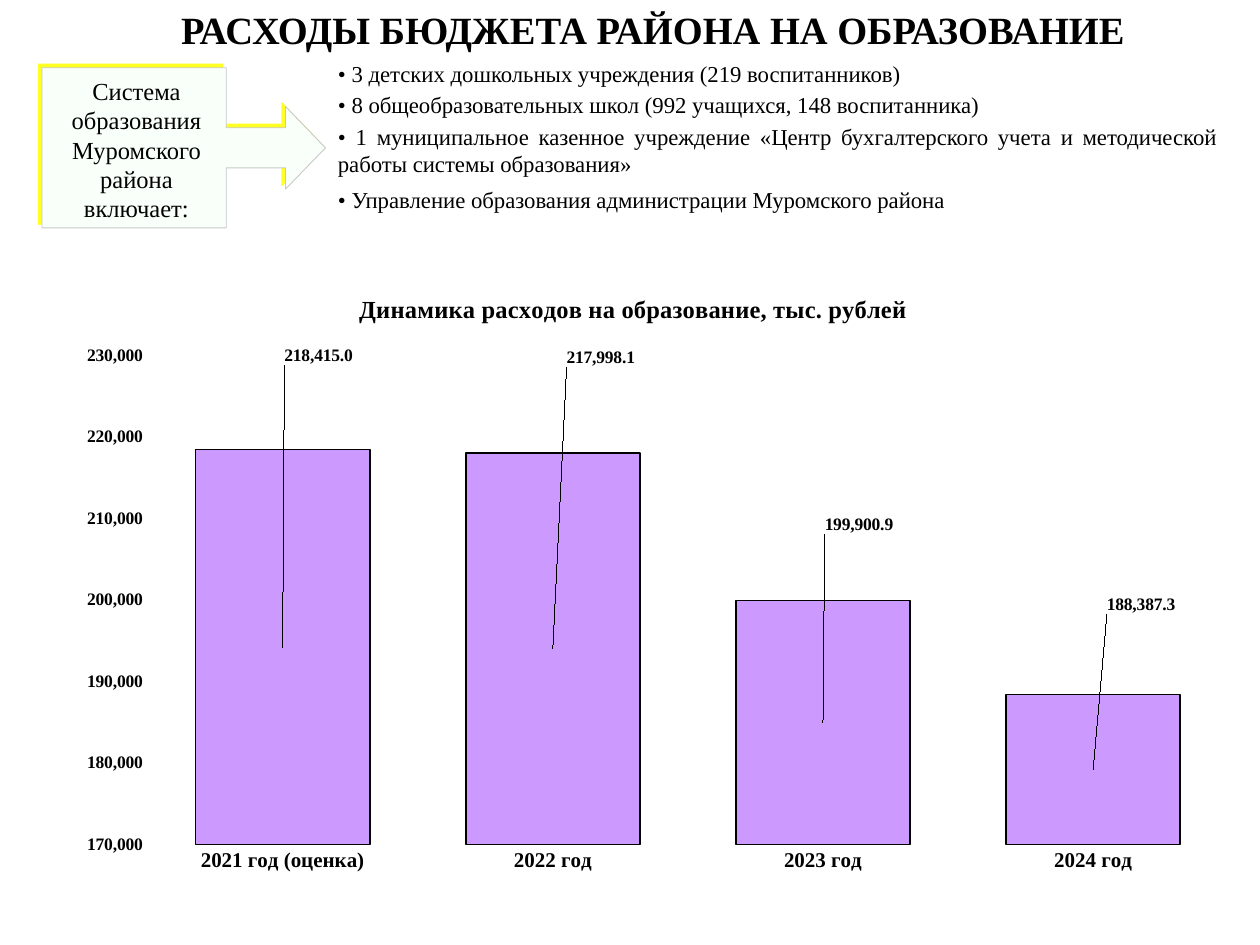
import pptx
import pptx.chart.data
import pptx.dml.color
import pptx.enum.chart
import pptx.enum.shapes
import pptx.enum.text
import pptx.oxml
import pptx.oxml.ns
import pptx.util

Pt = pptx.util.Pt
ALIGN = pptx.enum.text.PP_ALIGN
FONT = "Times New Roman"
CHART_NS = pptx.oxml.ns.nsdecls("c")

BULLETS = [  # text, top, height
    ("• 3 детских дошкольных учреждения (219 воспитанников)", 30.5, 23),
    ("• 8 общеобразовательных школ (992 учащихся, 148 воспитанника)", 48.5, 23),
    ("• 1 муниципальное казенное учреждение «Центр бухгалтерского учета "
     "и методической работы системы образования»", 66.5, 38),
    ("• Управление образования администрации Муромского района", 102.5, 23),
]
EXPENSES = [  # year, thousand roubles, label shift across and down
    ("2021 год (оценка)", 218415.0, 0.03, -0.44),
    ("2022 год", 217998.1, 0.04, -0.44),
    ("2023 год", 199900.9, 0.03, -0.3),
    ("2024 год", 188387.3, 0.04, -0.25),
]


def color(value):
    return pptx.dml.color.RGBColor.from_string(value)


def style_font(font, size, bold=False):
    font.name = FONT
    font.size = Pt(size)
    font.bold = bold
    font.color.rgb = color("000000")


def style_line(line, value, width):
    line.color.rgb = color(value)
    line.width = Pt(width)


def add_text(slide, box, text, size, alignment, bold=False):
    frame = slide.shapes.add_textbox(*map(Pt, box)).text_frame
    frame.word_wrap = True
    frame.auto_size = pptx.enum.text.MSO_AUTO_SIZE.SHAPE_TO_FIT_TEXT
    paragraph = frame.paragraphs[0]
    paragraph.text = text
    paragraph.alignment = alignment
    style_font(paragraph.font, size, bold)


def add_callout(slide, box):
    left, top, width, height = box
    callout = slide.shapes.add_shape(
        pptx.enum.shapes.MSO_SHAPE.RIGHT_ARROW_CALLOUT, *map(Pt, box))
    for index, value in enumerate((0.25, 0.258, 0.25, 0.65)):
        callout.adjustments[index] = value
    callout.fill.solid()
    callout.fill.fore_color.rgb = color("F9FFF9")
    style_line(callout.line, "C8C8C8", 0.5)

    # Yellow shadow towards the top left
    callout._element.spPr.append(pptx.oxml.parse_xml(
        f'<a:effectLst {pptx.oxml.ns.nsdecls("a")}>'
        f'<a:outerShdw dist="{Pt(3)}" dir="13500000" algn="ctr" rotWithShape="0">'
        '<a:srgbClr val="FFFF00"><a:alpha val="85000"/></a:srgbClr>'
        '</a:outerShdw></a:effectLst>'))

    add_text(slide, (left, top + 1, 108, height),
             "Система образования Муромского района включает:", 14, ALIGN.CENTER)


def add_bullets(slide, left, width):
    for text, top, height in BULLETS:
        add_text(slide, (left, top, width, height), text, 13, ALIGN.JUSTIFY)


def manual_layout(x, y, size=None):
    inner = size is not None
    parts = [("layoutTarget", "inner")] if inner else []
    if inner:
        parts += [("xMode", "edge"), ("yMode", "edge")]
    parts += [("x", x), ("y", y)]
    if inner:
        parts += [("w", size[0]), ("h", size[1])]
    body = "".join(f'<c:{name} val="{value}"/>' for name, value in parts)
    return pptx.oxml.parse_xml(
        f"<c:layout {CHART_NS}><c:manualLayout>{body}</c:manualLayout></c:layout>")


def style_axis(axis, size):
    style_font(axis.tick_labels.font, size, True)
    style_line(axis.format.line, "FFFFFF", 0.25)
    axis.major_tick_mark = pptx.enum.chart.XL_TICK_MARK.NONE
    axis.minor_tick_mark = pptx.enum.chart.XL_TICK_MARK.NONE


def add_labels(series):
    labels = series.data_labels
    labels.show_value = True
    labels.number_format = "#,##0.0"
    labels.number_format_is_linked = False
    style_font(labels.font, 10, True)

    # Each label is shifted above its column
    for index, (_, _, across, down) in enumerate(EXPENSES):
        style_font(series.points[index].data_label.font, 10, True)
        element = series._element.xpath(f"c:dLbls/c:dLbl[c:idx/@val={index}]")[0]
        element.insert(1, manual_layout(across, down))
        element.insert(2, pptx.oxml.parse_xml(
            f'<c:numFmt {CHART_NS} formatCode="#,##0.0" sourceLinked="0"/>'))


def add_expense_chart(slide, box):
    data = pptx.chart.data.CategoryChartData(number_format="#,##0.0")
    data.categories = [row[0] for row in EXPENSES]
    data.add_series("Расходы", [row[1] for row in EXPENSES])
    chart = slide.shapes.add_chart(
        pptx.enum.chart.XL_CHART_TYPE.COLUMN_STACKED, *map(Pt, box), data).chart
    style_font(chart.font, 10)
    chart.has_legend = False

    # Title
    chart.has_title = True
    title = chart.chart_title
    paragraph = title.text_frame.paragraphs[0]
    paragraph.text = "Динамика расходов на образование, тыс. рублей"
    style_font(paragraph.font, 14, True)
    title.include_in_layout = False
    for old in title._element.xpath("c:layout"):
        title._element.remove(old)
    title_layout = manual_layout(0.27, 0.04)
    for position, mode in enumerate(("xMode", "yMode")):
        title_layout[0].insert(position, pptx.oxml.parse_xml(
            f'<c:{mode} {CHART_NS} val="edge"/>'))
    title._element.insert(1, title_layout)

    # Plot area
    plot_area = chart._chartSpace.xpath("c:chart/c:plotArea")[0]
    for old in plot_area.xpath("c:layout"):
        plot_area.remove(old)
    plot_area.insert(0, manual_layout(0.097, 0.14, (0.903, 0.74)))

    # Axes
    style_axis(chart.category_axis, 12)
    value_axis = chart.value_axis
    style_axis(value_axis, 10)
    value_axis.minimum_scale = 170000
    value_axis.maximum_scale = 230000
    value_axis.major_unit = 10000
    value_axis.tick_labels.number_format = "#,##0"
    value_axis.tick_labels.number_format_is_linked = False
    style_line(value_axis.major_gridlines.format.line, "FFFFFF", 0.25)

    # Columns
    plot = chart.plots[0]
    plot.gap_width = 55
    plot.overlap = 100
    plot.vary_by_categories = False
    series = plot.series[0]
    series.format.fill.solid()
    series.format.fill.fore_color.rgb = color("CC99FF")
    style_line(series.format.line, "000000", 1)
    add_labels(series)


def main():
    presentation = pptx.Presentation()
    presentation.slide_width = Pt(720)
    presentation.slide_height = Pt(540)
    slide = presentation.slides.add_slide(presentation.slide_layouts[6])

    add_text(slide, (78, 0, 590, 34), "РАСХОДЫ БЮДЖЕТА РАЙОНА НА ОБРАЗОВАНИЕ",
             22, ALIGN.CENTER, True)
    add_callout(slide, (24, 38.75, 162, 91.5))
    add_bullets(slide, 186, 516)
    add_expense_chart(slide, (18, 150, 684, 378))
    presentation.save("out.pptx")


if __name__ == "__main__":
    main()
